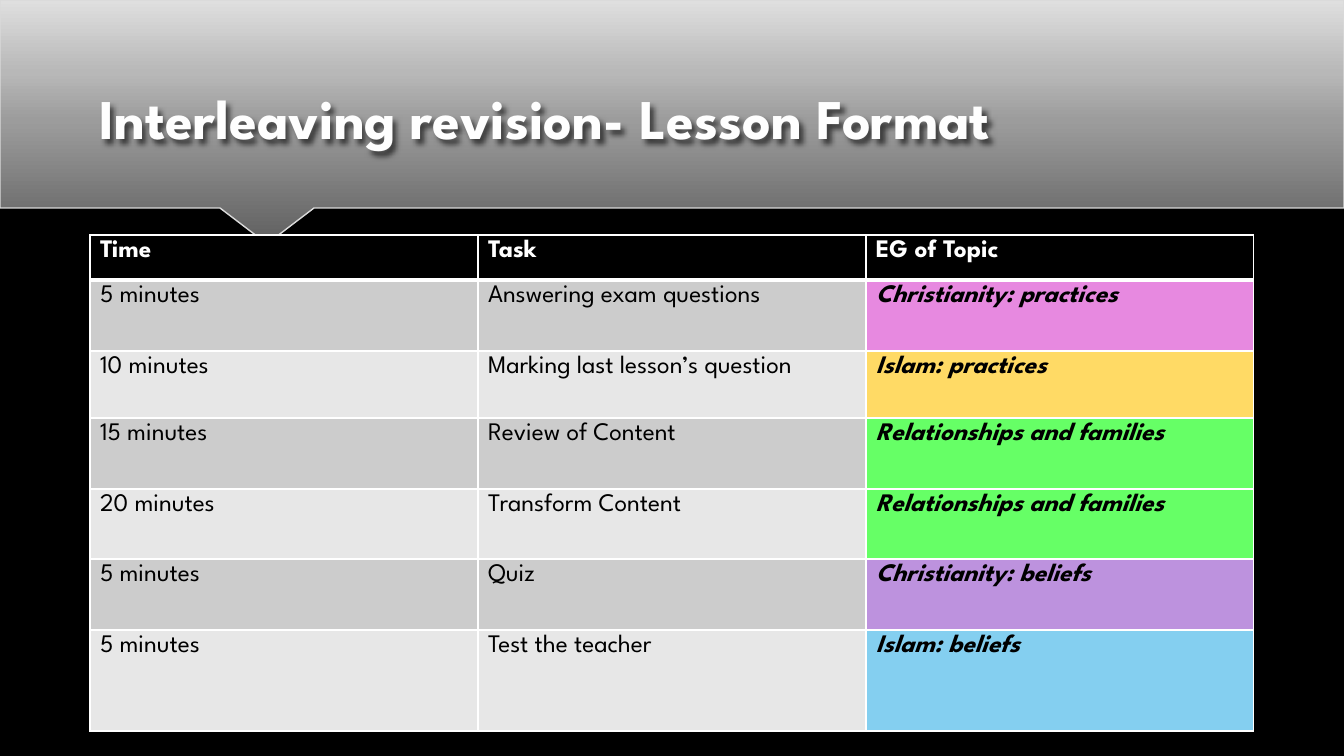
from dataclasses import dataclass

from pptx import Presentation
from pptx.dml.color import RGBColor
from pptx.enum.text import MSO_ANCHOR
from pptx.oxml import parse_xml
from pptx.oxml.ns import nsdecls, qn
from pptx.util import Emu, Pt

PX = 914400 / 100.8  # EMU per px
FONT = "League Spartan"

BLACK = RGBColor(0x00, 0x00, 0x00)
WHITE = RGBColor(0xFF, 0xFF, 0xFF)
TITLE_WHITE = RGBColor(0xFE, 0xFE, 0xFE)
BANNER_LINE = RGBColor(0xDA, 0xDA, 0xDA)
DARK_BAND = RGBColor(0xCC, 0xCC, 0xCC)
LIGHT_BAND = RGBColor(0xE7, 0xE7, 0xE7)
PINK = RGBColor(0xE7, 0x89, 0xE0)
YELLOW = RGBColor(0xFF, 0xDA, 0x65)
GREEN = RGBColor(0x66, 0xFF, 0x66)
PURPLE = RGBColor(0xBD, 0x92, 0xDE)
BLUE = RGBColor(0x84, 0xCF, 0xF0)

# Banner gradient: position in percent and colour, from the bottom up
BANNER_STOPS = (
    (0, RGBColor(0x61, 0x61, 0x61)),
    (50, RGBColor(0x9C, 0x9C, 0x9C)),
    (70, RGBColor(0xB8, 0xB8, 0xB8)),
    (100, RGBColor(0xDF, 0xDF, 0xDF)),
)
BANNER_OUTLINE = (
    (1344, 0), (0, 0), (0, 208), (220, 208), (262, 240), (264, 241),
    (266, 241), (269, 241), (272, 240), (314, 208), (1344, 208),
)


@dataclass(frozen=True)
class Activity:
    time: str
    task: str
    topic: str
    colour: RGBColor
    height: int


HEADINGS = ("Time", "Task", "EG of Topic")
HEADING_HEIGHT = 45
COLUMN_WIDTH = 388
ACTIVITIES = (
    Activity("5 minutes", "Answering exam questions", "Christianity: practices", PINK, 71),
    Activity("10 minutes", "Marking last lesson’s question", "Islam: practices", YELLOW, 67),
    Activity("15 minutes", "Review of Content", "Relationships and families", GREEN, 71),
    Activity("20 minutes", "Transform Content", "Relationships and families", GREEN, 70),
    Activity("5 minutes", "Quiz", "Christianity: beliefs", PURPLE, 71),
    Activity("5 minutes", "Test the teacher", "Islam: beliefs", BLUE, 101),
)


def px(length: int) -> Emu:
    return Emu(round(length * PX))


def write(frame, text: str, size: int, colour: RGBColor, **formats) -> None:
    span = frame.paragraphs[0].add_run()
    span.text = text
    for name, value in {"name": FONT, "size": Pt(size), **formats}.items():
        setattr(span.font, name, value)
    span.font.color.rgb = colour


def add_shadow(shape, blur: int, distance: int, angle: int, alpha: int) -> None:
    shape._element.spPr.append(parse_xml(
        f'<a:effectLst {nsdecls("a")}><a:outerShdw blurRad="{Pt(blur)}" '
        f'dist="{Pt(distance)}" dir="{angle * 60000}" rotWithShape="0">'
        f'<a:srgbClr val="{BLACK}"><a:alpha val="{alpha * 1000}"/></a:srgbClr>'
        '</a:outerShdw></a:effectLst>'
    ))


def draw_banner(page) -> None:
    builder = page.shapes.build_freeform(*BANNER_OUTLINE[0], scale=PX)
    builder.add_line_segments(BANNER_OUTLINE[1:], close=True)
    banner = builder.convert_to_shape()
    banner.fill.gradient()
    banner.fill.gradient_angle = 90
    stop_list = banner._element.spPr.find(".//" + qn("a:gsLst"))
    for stop in list(stop_list):
        stop_list.remove(stop)
    for position, colour in BANNER_STOPS:
        stop_list.append(parse_xml(
            f'<a:gs {nsdecls("a")} pos="{position * 1000}">'
            f'<a:srgbClr val="{colour}"/></a:gs>'
        ))
    banner.line.color.rgb = BANNER_LINE
    banner.line.width = Pt(1)
    add_shadow(banner, blur=4, distance=3, angle=90, alpha=35)


def draw_title(page) -> None:
    box = page.shapes.add_textbox(px(90), px(49), px(1165), px(107))
    box.text_frame.word_wrap = True
    box.text_frame.vertical_anchor = MSO_ANCHOR.BOTTOM
    write(box.text_frame, "Interleaving revision- Lesson Format", 40,
          TITLE_WHITE, bold=True)
    add_shadow(box, blur=4, distance=3, angle=45, alpha=60)


def set_borders(cell, top: int, bottom: int) -> None:
    properties = cell._tc.get_or_add_tcPr()
    for side, width in {"L": 1, "R": 1, "T": top, "B": bottom}.items():
        properties.append(parse_xml(
            f'<a:ln{side} {nsdecls("a")} w="{Pt(width)}"><a:solidFill>'
            f'<a:srgbClr val="{WHITE}"/></a:solidFill></a:ln{side}>'
        ))


def fill_cell(cell, text: str, fill: RGBColor, colour: RGBColor,
              top: int = 1, bottom: int = 1, **formats) -> None:
    set_borders(cell, top, bottom)
    cell.fill.solid()
    cell.fill.fore_color.rgb = fill
    write(cell.text_frame, text, 18, colour, **formats)


def draw_table(page) -> None:
    heights = [HEADING_HEIGHT, *(activity.height for activity in ACTIVITIES)]
    table = page.shapes.add_table(
        len(heights), len(HEADINGS), px(90), px(235),
        px(COLUMN_WIDTH * len(HEADINGS)), px(sum(heights)),
    ).table
    for column in table.columns:
        column.width = px(COLUMN_WIDTH)
    for row, height in zip(table.rows, heights):
        row.height = px(height)

    # Heading row
    for index, heading in enumerate(HEADINGS):
        fill_cell(table.cell(0, index), heading, BLACK, WHITE, bottom=3, bold=True)

    # Activity rows: grey bands, with a coloured topic
    for number, activity in enumerate(ACTIVITIES, 1):
        band = DARK_BAND if number % 2 else LIGHT_BAND
        top = 3 if number == 1 else 1
        texts = (activity.time, activity.task, activity.topic)
        fills = (band, band, activity.colour)
        for index, (text, fill) in enumerate(zip(texts, fills)):
            is_topic = index == 2
            fill_cell(table.cell(number, index), text, fill, BLACK, top=top,
                      bold=is_topic, italic=is_topic)


def main() -> None:
    deck = Presentation()
    deck.slide_width, deck.slide_height = px(1344), px(756)
    page = deck.slides.add_slide(deck.slide_layouts[6])
    page.background.fill.solid()
    page.background.fill.fore_color.rgb = BLACK
    draw_banner(page)
    draw_title(page)
    draw_table(page)
    deck.save("out.pptx")


if __name__ == "__main__":
    main()
